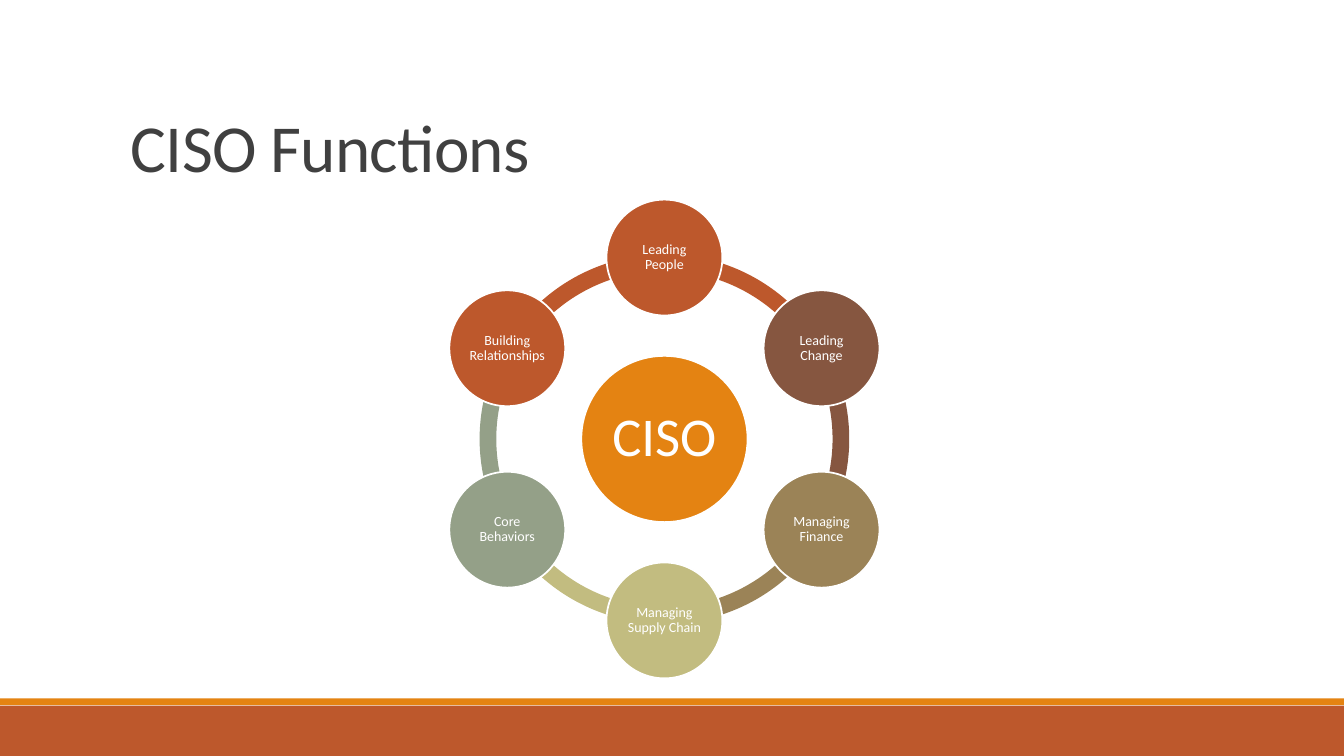
from math import cos, radians, sin

from pptx import Presentation
from pptx.dml.color import RGBColor
from pptx.enum.shapes import MSO_SHAPE
from pptx.enum.text import MSO_ANCHOR, PP_ALIGN
from pptx.util import Inches, Pt

WHITE = RGBColor(0xFF, 0xFF, 0xFF)
GRAY = RGBColor(0x40, 0x40, 0x40)
ORANGE = RGBColor(0xE4, 0x83, 0x12)
RUST = RGBColor(0xBD, 0x58, 0x2C)
BROWN = RGBColor(0x86, 0x56, 0x40)
TAN = RGBColor(0x9B, 0x83, 0x57)
KHAKI = RGBColor(0xC2, 0xBC, 0x80)
SAGE = RGBColor(0x94, 0xA0, 0x88)

# Grid of square cells over the slide
COLS, ROWS = 160, 90

# Ring layout in grid cells, clockwise from the top
MID_X, MID_Y = 79.1, 52.26
ORBIT, RING, HUB, NODE = 21.6, 44, 19.8, 13.8
NODES = [
    ("Leading People", RUST),
    ("Leading Change", BROWN),
    ("Managing Finance", TAN),
    ("Managing Supply Chain", KHAKI),
    ("Core Behaviors", SAGE),
    ("Building Relationships", RUST),
]


def write(shape, text, size=10, color=WHITE, align=PP_ALIGN.CENTER,
          anchor=MSO_ANCHOR.MIDDLE, inset=0.01, lead=0.9, track=0):
    frame = shape.text_frame
    frame.word_wrap = True
    frame.vertical_anchor = anchor
    frame.margin_left = frame.margin_right = Inches(inset)
    frame.margin_top = frame.margin_bottom = Inches(min(inset, 0.05))
    para = frame.paragraphs[0]
    para.alignment = align
    para.line_spacing = lead
    run = para.add_run()
    run.text = text
    run.font.name = "Calibri"
    run.font.size = Pt(size)
    run.font.color.rgb = color
    if track:
        run.font._element.set("spc", str(track))


class Deck:
    def __init__(self):
        self.prs = Presentation()
        self.prs.slide_width = Inches(13.33)
        self.prs.slide_height = Inches(7.5)
        self.slide = self.prs.slides.add_slide(self.prs.slide_layouts[6])

    def place(self, left, top, wide, high):
        col = self.prs.slide_width / COLS
        row = self.prs.slide_height / ROWS
        return (round(left * col), round(top * row),
                round(wide * col), round(high * row))

    def form(self, kind, box, fill):
        shape = self.slide.shapes.add_shape(kind, *self.place(*box))
        shape.shadow.inherit = False
        shape.fill.solid()
        shape.fill.fore_color.rgb = fill
        shape.line.fill.background()
        return shape

    def bar(self, top, high, fill):
        self.form(MSO_SHAPE.RECTANGLE, (0, top, COLS, high), fill)

    def title(self, text):
        box = self.slide.shapes.add_textbox(*self.place(14.4, 3.72, 132, 19.08))
        write(box, text, size=48, color=GRAY, align=PP_ALIGN.LEFT,
              anchor=MSO_ANCHOR.BOTTOM, inset=0.1, lead=0.85, track=-50)

    def round(self, kind, x, y, wide, fill):
        box = (x - wide / 2, y - wide / 2, wide, wide)
        return self.form(kind, box, fill)

    def arc(self, start, fill):
        shape = self.round(MSO_SHAPE.BLOCK_ARC, MID_X, MID_Y, RING, fill)
        # Angles are stored in 60000ths of a degree, set here in 100000ths
        shape.adjustments[0] = start % 360 * 0.6
        shape.adjustments[1] = (start + 60) % 360 * 0.6
        shape.adjustments[2] = 0.045

    def disc(self, text, x, y, wide, fill, **style):
        shape = self.round(MSO_SHAPE.OVAL, x, y, wide, fill)
        shape.line.color.rgb = WHITE
        shape.line.width = Pt(1.25)
        write(shape, text, **style)


def main():
    deck = Deck()

    # Footer bars and title
    deck.bar(84, 6, RUST)
    deck.bar(83.15, 0.8, ORANGE)
    deck.title("CISO Functions")

    # Ring segments, each in the colour of the node it leaves
    step = 360 / len(NODES)
    for i, (_, fill) in enumerate(NODES):
        deck.arc(270 + i * step, fill)

    # Hub and nodes
    deck.disc("CISO", MID_X, MID_Y, HUB, ORANGE, size=39, inset=0.05)
    for i, (text, fill) in enumerate(NODES):
        turn = radians(270 + i * step)
        deck.disc(text, MID_X + ORBIT * cos(turn), MID_Y + ORBIT * sin(turn),
                  NODE, fill)

    deck.prs.save("out.pptx")


if __name__ == "__main__":
    main()
